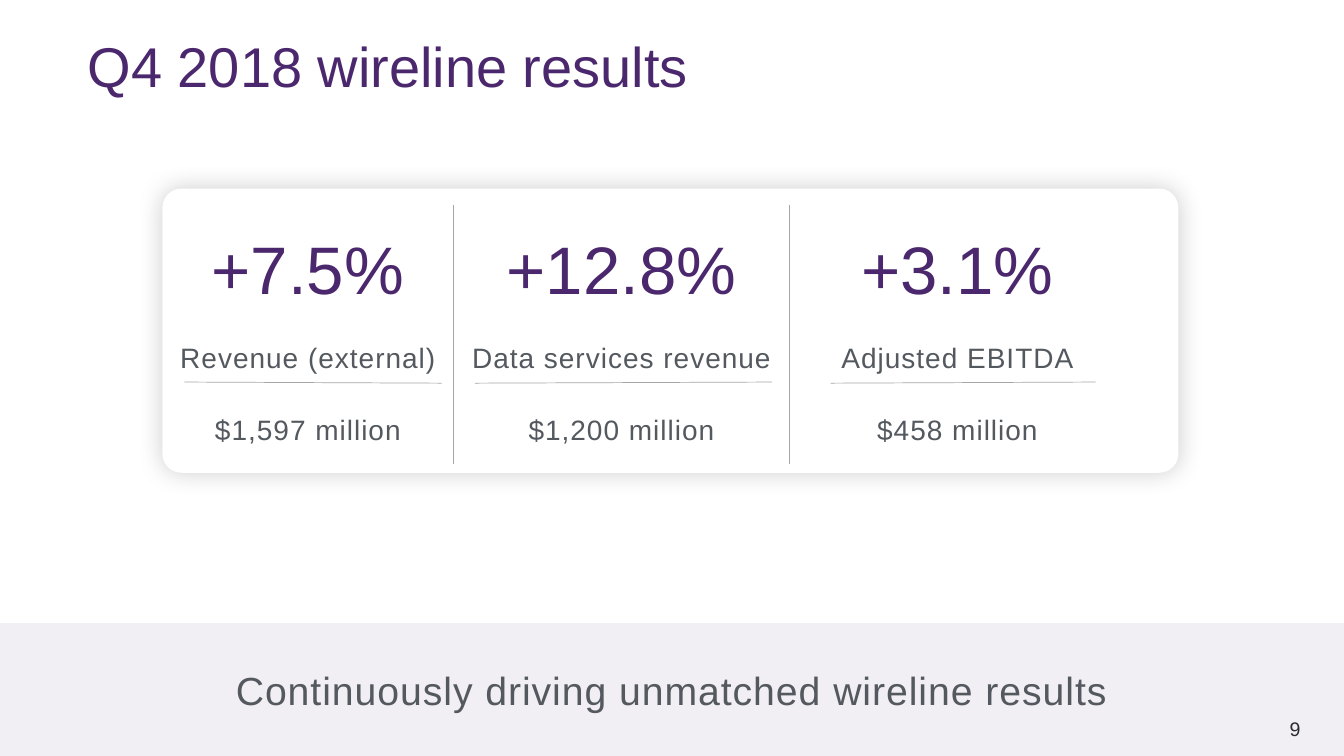
from lxml.etree import SubElement
from pptx import Presentation
from pptx.dml.color import RGBColor
from pptx.enum.shapes import MSO_CONNECTOR as Connector, MSO_SHAPE as Shape
from pptx.enum.text import MSO_ANCHOR as Anchor, PP_ALIGN as Align
from pptx.oxml.ns import qn
from pptx.util import Pt

PURPLE, GREY, RULE = "4B286D", "54595F", "A5A5A5"
NO_GRID_STYLE = "{2D5ABB26-0587-4C30-8999-92F81FD0307C}"

RESULTS = [
    ("+7.5%", "Revenue (external)", "$1,597 million"),
    ("+12.8%", "Data services revenue", "$1,200 million"),
    ("+3.1%", "Adjusted EBITDA", "$458 million"),
]
COLUMN_WIDTHS = [208, 240, 240]
ROW_HEIGHTS = [15, 61, 14.5, 30.5, 24, 23, 12]
# Table row: (index in result, size, colour, spacing, side inset, top inset)
TEXT_ROWS = {
    1: (0, 48, PURPLE, 0, 10.8, 3.6),
    3: (1, 20, GREY, 0.7, 10.8, 3.6),
    5: (2, 20, GREY, 0.7, 0, 0),
}
# Rules under the labels, relative to the card: x1, y1, x2, y2
LABEL_RULES = [
    (15.8, 138.2, 199.4, 139),
    (223.2, 139, 435.6, 138.2),
    (477.4, 139, 666.7, 138.2),
]


def color(value):
    return RGBColor.from_string(value)


def apply(target, formats):
    for name, value in formats.items():
        setattr(target, name, value)


def write(frame, text, size, tint, align, anchor=Anchor.MIDDLE, spacing=0, wrap=True):
    apply(frame, {"word_wrap": wrap, "vertical_anchor": anchor})
    para = frame.paragraphs[0]
    para.alignment = align
    span = para.add_run()
    span.text = text
    apply(span.font, {"name": "Arial", "size": Pt(size)})
    span.font.color.rgb = color(tint)
    if spacing:
        span.font._element.set("spc", str(round(spacing * 100)))


def add_panel(page, kind, box, fill):
    panel = page.shapes.add_shape(kind, *map(Pt, box))
    panel.shadow.inherit = False
    panel.fill.solid()
    panel.fill.fore_color.rgb = color(fill)
    panel.line.fill.background()
    return panel


def add_text(page, box, *args, **formats):
    write(page.shapes.add_textbox(*map(Pt, box)).text_frame, *args, **formats)


def add_glow(panel):
    effects = panel._element.spPr.find(qn("a:effectLst"))
    shadow = SubElement(effects, qn("a:outerShdw"), blurRad=str(Pt(18)), dist="0",
                        dir="0", algn="ctr", rotWithShape="0")
    black = SubElement(shadow, qn("a:srgbClr"), val="000000")
    SubElement(black, qn("a:alpha"), val="20000")


def add_border(cell, side):
    line = SubElement(cell._tc.get_or_add_tcPr(), qn(f"a:{side}"), w=str(Pt(1.5)))
    fill = SubElement(line, qn("a:solidFill"))
    SubElement(fill, qn("a:srgbClr"), val=RULE)


def fill_cell(cell, row, column):
    if column > 0:
        add_border(cell, "lnL")
    if column < len(RESULTS) - 1:
        add_border(cell, "lnR")
    cell.fill.background()
    part, size, tint, spacing, side, top = TEXT_ROWS.get(row, (None, 4, GREY, 0, 0, 0))
    apply(cell, {"margin_left": Pt(side), "margin_right": Pt(side),
                 "margin_top": Pt(top), "margin_bottom": Pt(top),
                 "vertical_anchor": Anchor.MIDDLE})
    if part is None:
        # A small end mark keeps the spacer row at its height
        SubElement(cell.text_frame.paragraphs[0]._p, qn("a:endParaRPr"), sz=str(size * 100))
    else:
        write(cell.text_frame, RESULTS[column][part], size, tint, Align.CENTER,
              spacing=spacing)


def add_results_table(page, left, top):
    table = page.shapes.add_table(
        len(ROW_HEIGHTS), len(RESULTS), Pt(left), Pt(top),
        Pt(sum(COLUMN_WIDTHS)), Pt(sum(ROW_HEIGHTS))).table
    apply(table, {"first_row": False, "horz_banding": False})
    table._tbl.tblPr.find(qn("a:tableStyleId")).text = NO_GRID_STYLE
    for column, width in zip(table.columns, COLUMN_WIDTHS):
        column.width = Pt(width)
    for row, height in enumerate(ROW_HEIGHTS):
        table.rows[row].height = Pt(height)
        for column in range(len(RESULTS)):
            fill_cell(table.cell(row, column), row, column)


def add_rule(page, x1, y1, x2, y2):
    rule = page.shapes.add_connector(Connector.STRAIGHT, *map(Pt, (x1, y1, x2, y2)))
    rule.line.color.rgb = color(RULE)
    rule.line.width = Pt(0.5)
    SubElement(rule._element.spPr, qn("a:effectLst"))


def add_results_card(page, left, top, width, height):
    card = add_panel(page, Shape.ROUNDED_RECTANGLE, (left, top, width, height), "FFFFFF")
    card.adjustments[0] = 0.067
    add_glow(card)
    add_results_table(page, left, top + 11.5)
    for x1, y1, x2, y2 in LABEL_RULES:
        add_rule(page, left + x1, top + y1, left + x2, top + y2)


def add_footer(page, left, top, width, height):
    band = add_panel(page, Shape.RECTANGLE, (left, top, width, height), "F2EFF4")
    write(band.text_frame, "Continuously driving unmatched wireline results", 28, GREY,
          Align.CENTER, spacing=0.7)
    # Page number
    add_text(page, (left + width - 79.5, top + height - 39.6, 55.5, 39.6),
             "9", 14, "2A2C2E", Align.RIGHT)


def main():
    deck = Presentation()
    apply(deck, {"slide_width": Pt(960), "slide_height": Pt(540)})
    page = deck.slides.add_slide(deck.slide_layouts[6])
    add_text(page, (55.5, 18.7, 448, 55.5), "Q4 2018 wireline results", 40, PURPLE,
             Align.LEFT, anchor=Anchor.BOTTOM, wrap=False)
    add_results_card(page, 116, 134.7, 725.7, 203)
    add_footer(page, 0, 445, 960, 95)
    deck.save("out.pptx")


if __name__ == "__main__":
    main()
